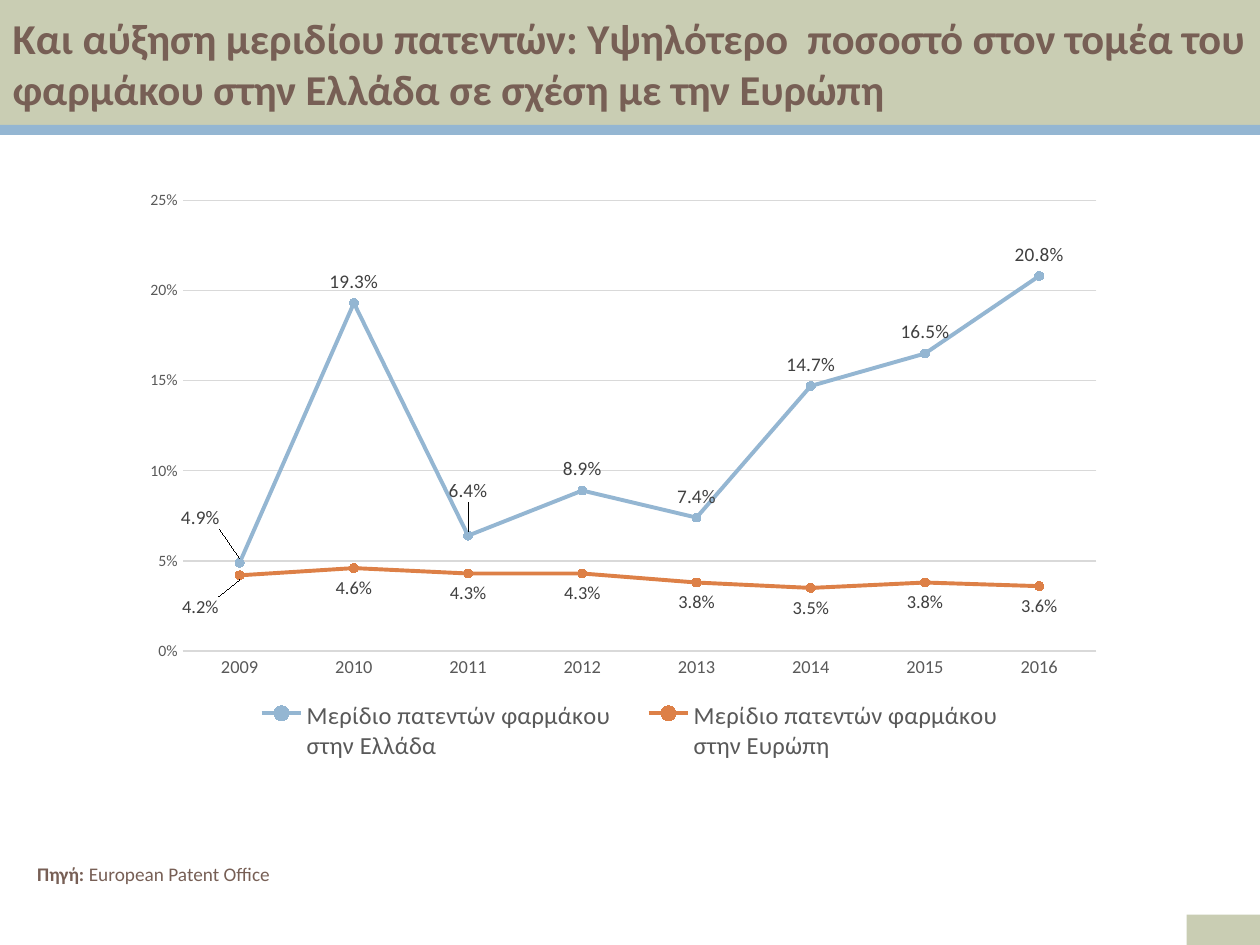
"""Build a slide comparing pharma patent shares in Greece and Europe."""
from dataclasses import dataclass

from lxml import etree
from pptx import Presentation
from pptx.chart.data import CategoryChartData
from pptx.dml.color import RGBColor
from pptx.enum.chart import (XL_CHART_TYPE, XL_LABEL_POSITION, XL_LEGEND_POSITION,
                             XL_MARKER_STYLE, XL_TICK_MARK)
from pptx.enum.shapes import MSO_SHAPE
from pptx.enum.text import MSO_ANCHOR, MSO_AUTO_SIZE, PP_ALIGN
from pptx.oxml.ns import qn
from pptx.util import Cm, Pt

LINE = XL_CHART_TYPE.LINE_MARKERS
ABOVE, BELOW = XL_LABEL_POSITION.ABOVE, XL_LABEL_POSITION.BELOW
BOTTOM = XL_LEGEND_POSITION.BOTTOM
CIRCLE = XL_MARKER_STYLE.CIRCLE
NO_TICK = XL_TICK_MARK.NONE
RECT = MSO_SHAPE.RECTANGLE
MIDDLE = MSO_ANCHOR.MIDDLE
FIXED = MSO_AUTO_SIZE.NONE
LEFT, JUSTIFY = PP_ALIGN.LEFT, PP_ALIGN.JUSTIFY


@dataclass(frozen=True)
class Theme:
    face: str = "Calibri"
    sage: str = "C9CDB3"
    blue: str = "94B6D2"
    orange: str = "DD8047"
    brown: str = "775F55"
    gray: str = "595959"
    dark: str = "404040"
    grid: str = "D9D9D9"
    black: str = "000000"
    head: float = 24.3
    key: float = 14
    note: float = 11
    label: float = 10.5
    base: float = 10
    scale: float = 9


@dataclass(frozen=True)
class Series:
    name: str
    color: str
    place: XL_LABEL_POSITION
    size: float
    values: tuple
    shifts: dict


class Deck:
    def __init__(self, theme):
        self.theme = theme
        self.deck = Presentation()
        self.deck.slide_width, self.deck.slide_height = Cm(25.4), Cm(19.05)
        self.slide = self.deck.slides.add_slide(self.deck.slide_layouts[5])

    def paint(self, fill, color):
        fill.solid()
        fill.fore_color.rgb = RGBColor.from_string(color)

    def style(self, font, size, color, bold=False):
        font.name, font.size, font.bold = self.theme.face, Pt(size), bold
        font.color.rgb = RGBColor.from_string(color)

    def stroke(self, line, color, width):
        self.paint(line.fill, color)
        line.width = Pt(width)

    def text(self, para, words, size, color, bold=False):
        run = para.add_run()
        run.text = words
        self.style(run.font, size, color, bold)

    def title(self, words, box):
        shape = self.slide.shapes.title
        shape.left, shape.top, shape.width, shape.height = map(Cm, box)
        self.paint(shape.fill, self.theme.sage)
        frame = shape.text_frame
        frame.word_wrap, frame.auto_size = True, FIXED
        frame.vertical_anchor = MIDDLE
        para = frame.paragraphs[0]
        para.alignment = LEFT
        self.text(para, words, self.theme.head, self.theme.brown, True)

    def bar(self, color, box):
        shape = self.slide.shapes.add_shape(RECT, *map(Cm, box))
        shape.shadow.inherit = False
        self.paint(shape.fill, color)
        shape.line.fill.background()

    def note(self, parts, box):
        frame = self.slide.shapes.add_textbox(*map(Cm, box)).text_frame
        frame.word_wrap = True
        para = frame.paragraphs[0]
        para.alignment, para.line_spacing, para.space_after = JUSTIFY, 1.5, Pt(6)
        for words, bold in parts:
            self.text(para, words, self.theme.note, self.theme.brown, bold)

    def layout(self, **places):
        layout = etree.Element(qn("c:layout"))
        manual = etree.SubElement(layout, qn("c:manualLayout"))
        for key, value in places.items():
            etree.SubElement(manual, qn("c:" + key)).set("val", str(value))
        return layout

    def label(self, plot, item):
        labels = plot.data_labels
        labels.show_value, labels.position = True, item.place
        labels.number_format, labels.number_format_is_linked = "0.0%", False
        self.style(labels.font, item.size, self.theme.dark)
        for index, (x, y) in item.shifts.items():
            label = plot.points[index].data_label
            label.position = item.place
            self.style(label.font, item.size, self.theme.dark)
            node = plot._element.xpath(f"c:dLbls/c:dLbl[c:idx/@val='{index}']")[0]
            node.insert(1, self.layout(x=x, y=y))
            node.insert(2, etree.Element(qn("c:numFmt"), formatCode="0.0%", sourceLinked="0"))

    def chart(self, years, items, box):
        theme = self.theme
        data = CategoryChartData(number_format="0.0%")
        data.categories = years
        for item in items:
            data.add_series(item.name, item.values)
        chart = self.slide.shapes.add_chart(LINE, *map(Cm, box), data).chart
        self.style(chart.font, theme.base, theme.black)
        chart.has_title = False
        chart.plots[0].vary_by_categories = False
        for plot, item in zip(chart.plots[0].series, items):
            plot.smooth = False
            self.stroke(plot.format.line, item.color, 2.25)
            plot.marker.style, plot.marker.size = CIRCLE, 5
            self.paint(plot.marker.format.fill, item.color)
            self.stroke(plot.marker.format.line, item.color, 0.75)
            self.label(plot, item)
        self.axes(chart)
        chart.has_legend = True
        legend = chart.legend
        legend.position, legend.include_in_layout = BOTTOM, False
        self.style(legend.font, theme.key, theme.gray)
        for old in legend._element.findall(qn("c:layout")):
            legend._element.remove(old)
        legend._element.insert(1, self.layout(
            xMode="edge", yMode="edge", x=0.1, y=0.87, w=0.81, h=0.13))
        area = chart._chartSpace.chart.plotArea
        for old in area.findall(qn("c:layout")):
            area.remove(old)
        area.insert(0, self.layout(layoutTarget="inner", xMode="edge", yMode="edge",
                                   x=0.05, y=0.04, w=0.93, h=0.76))

    def axes(self, chart):
        theme = self.theme
        years, share = chart.category_axis, chart.value_axis
        for axis, size in ((years, theme.label), (share, theme.scale)):
            axis.major_tick_mark = axis.minor_tick_mark = NO_TICK
            self.style(axis.tick_labels.font, size, theme.gray)
        self.stroke(years.format.line, theme.grid, 0.75)
        share.format.line.fill.background()
        share.minimum_scale, share.maximum_scale, share.major_unit = 0, 0.25, 0.05
        share.tick_labels.number_format = "0%"
        share.tick_labels.number_format_is_linked = False
        share.has_major_gridlines = True
        self.stroke(share.major_gridlines.format.line, theme.grid, 0.75)


def main():
    theme = Theme()
    show = Deck(theme)
    show.title("Και αύξηση μεριδίου πατεντών: Υψηλότερο  ποσοστό στον τομέα του "
               "φαρμάκου στην Ελλάδα σε σχέση με την Ευρώπη", (0, 0, 25.4, 2.52))
    show.bar(theme.blue, (0, 2.52, 25.4, 0.2))
    show.bar(theme.sage, (23.92, 18.44, 1.48, 0.61))
    greece = Series("Μερίδιο πατεντών φαρμάκου\nστην Ελλάδα", theme.blue, ABOVE, theme.note,
                    (0.049, 0.193, 0.064, 0.089, 0.074, 0.147, 0.165, 0.208),
                    {0: (-0.04, -0.04), 2: (0, -0.04)})
    europe = Series("Μερίδιο πατεντών φαρμάκου\nστην Ευρώπη", theme.orange, BELOW, theme.label,
                    (0.042, 0.046, 0.043, 0.043, 0.038, 0.035, 0.038, 0.036),
                    {0: (-0.04, 0.02)})
    years = [str(year) for year in range(2009, 2017)]
    show.chart(years, (greece, europe), (2.69, 3.56, 19.81, 11.96))
    show.note((("Πηγή: ", True), ("European Patent Office", False)), (0.5, 17.02, 9.88, 0.97))
    show.deck.save("out.pptx")


if __name__ == "__main__":
    main()
